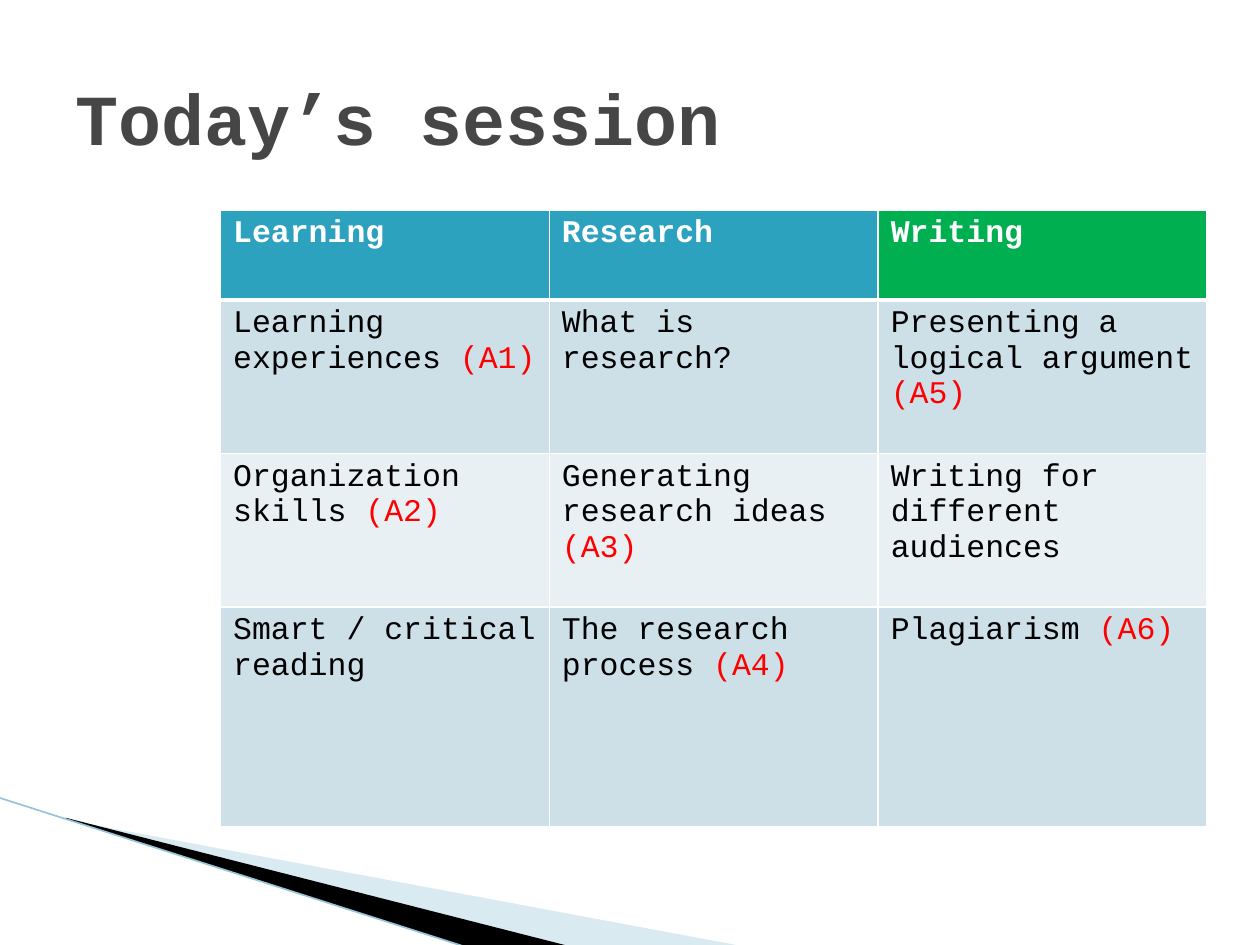
from dataclasses import dataclass

from lxml import etree
from pptx import Presentation
from pptx.dml.color import RGBColor
from pptx.enum.text import MSO_ANCHOR
from pptx.enum.shapes import MSO_CONNECTOR
from pptx.oxml.ns import qn
from pptx.util import Inches, Pt

MIDDLE = MSO_ANCHOR.MIDDLE
STRAIGHT = MSO_CONNECTOR.STRAIGHT


@dataclass(frozen=True)
class Theme:
    font: str = "Courier New"
    title: float = 41
    body: float = 18
    gray: str = "464646"
    white: str = "FFFFFF"
    black: str = "000000"
    red: str = "FF0000"
    blue: str = "2DA2BF"
    green: str = "00B050"
    bands: tuple = ("CDE0E8", "E8F0F4")
    pale: str = "A0CBDC"
    edge: str = "97C5D8"


THEME = Theme()
COLS, ROWS = 100, 75

HEADS = (("Learning", THEME.blue), ("Research", THEME.blue),
         ("Writing", THEME.green))
TOPICS = (
    (("Learning experiences ", "(A1)"), ("What is research?", ""),
     ("Presenting a logical argument ", "(A5)")),
    (("Organization skills ", "(A2)"), ("Generating research ideas ", "(A3)"),
     ("Writing for different audiences", "")),
    (("Smart / critical reading", ""), ("The research process ", "(A4)"),
     ("Plagiarism ", "(A6)")),
)


def grid(cells):
    """Turn grid columns or rows, a tenth of an inch each, into a length."""
    return Inches(cells / 10)


def paint(fill, color):
    fill.solid()
    fill.fore_color.rgb = RGBColor.from_string(color)


def write(frame, text, size=THEME.body, color=THEME.black, bold=False):
    """Append a run to the first paragraph of a text frame."""
    run = frame.paragraphs[0].add_run()
    run.text = text
    font = run.font
    font.name, font.size, font.bold = THEME.font, Pt(size), bold
    font.color.rgb = RGBColor.from_string(color)


def wedge(slide, box, points, color, alpha=None):
    left, top = box[:2]
    spots = [(grid(left + x), grid(top + y)) for x, y in points]
    form = slide.shapes.build_freeform(*spots[0])
    form.add_line_segments(spots[1:], close=True)
    shape = form.convert_to_shape()
    shape.shadow.inherit = False
    shape.line.fill.background()
    paint(shape.fill, color)
    if alpha:
        tint = next(shape.fill._xPr.iter(qn("a:srgbClr")))
        etree.SubElement(tint, qn("a:alpha"), val=str(alpha * 1000))


def corner(slide, box):
    left, top, wide, high = box
    # Pale and black wedges
    wedge(slide, box, ((5.5, 1.8), (wide, high), (45.6, high), (5.5, 1.7)),
          THEME.pale, alpha=40)
    wedge(slide, box, ((5.3, 1.6), (45.7, high), (37.2, high), (5.4, 1.7)),
          THEME.black)
    # Thin edge
    edge = slide.shapes.add_connector(
        STRAIGHT, grid(left), grid(top), grid(left + 37.2), grid(top + high))
    edge.line.color.rgb = RGBColor.from_string(THEME.edge)
    edge.line.width = Pt(0.95)
    etree.SubElement(edge._element.spPr, qn("a:effectLst"))


def title(slide, box, text):
    frame = slide.shapes.add_textbox(*map(grid, box)).text_frame
    frame.word_wrap = True
    frame.vertical_anchor = MIDDLE
    write(frame, text, size=THEME.title, color=THEME.gray, bold=True)


def border(cell, base):
    """Draw white cell borders, with the given width at the bottom."""
    props = cell._tc.get_or_add_tcPr()
    for spot, (side, width) in enumerate(
            (("L", 1), ("R", 1), ("T", 1), ("B", base))):
        line = etree.Element(qn(f"a:ln{side}"), w=str(Pt(width)))
        fill = etree.SubElement(line, qn("a:solidFill"))
        etree.SubElement(fill, qn("a:srgbClr"), val=THEME.white)
        props.insert(spot, line)


def plan(slide, box, heights):
    table = slide.shapes.add_table(
        len(heights), len(HEADS), *map(grid, box)).table
    for col in table.columns:
        col.width = grid(box[2] / len(HEADS))
    for row, share in zip(table.rows, heights):
        row.height = grid(box[3] * share / sum(heights))
    # Heading row
    for col, (text, color) in enumerate(HEADS):
        cell = table.cell(0, col)
        paint(cell.fill, color)
        border(cell, 3)
        write(cell.text_frame, text, color=THEME.white, bold=True)
    # Topics with their activity codes, in bands
    for row, line in enumerate(TOPICS):
        for col, (text, code) in enumerate(line):
            cell = table.cell(row + 1, col)
            paint(cell.fill, THEME.bands[row % 2])
            border(cell, 1)
            write(cell.text_frame, text)
            if code:
                write(cell.text_frame, code, color=THEME.red)


def main():
    deck = Presentation()
    deck.slide_width, deck.slide_height = grid(COLS), grid(ROWS)
    slide = deck.slides.add_slide(deck.slide_layouts[6])
    corner(slide, (-0.1, 63.3, 59.6, 11.9))
    title(slide, (5, 3, 90, 12.5), "Today’s session")
    plan(slide, (17.5, 16.7, 78.3, 48.9), (7.1, 12.2, 12.2, 17.4))
    deck.save("out.pptx")


if __name__ == "__main__":
    main()
